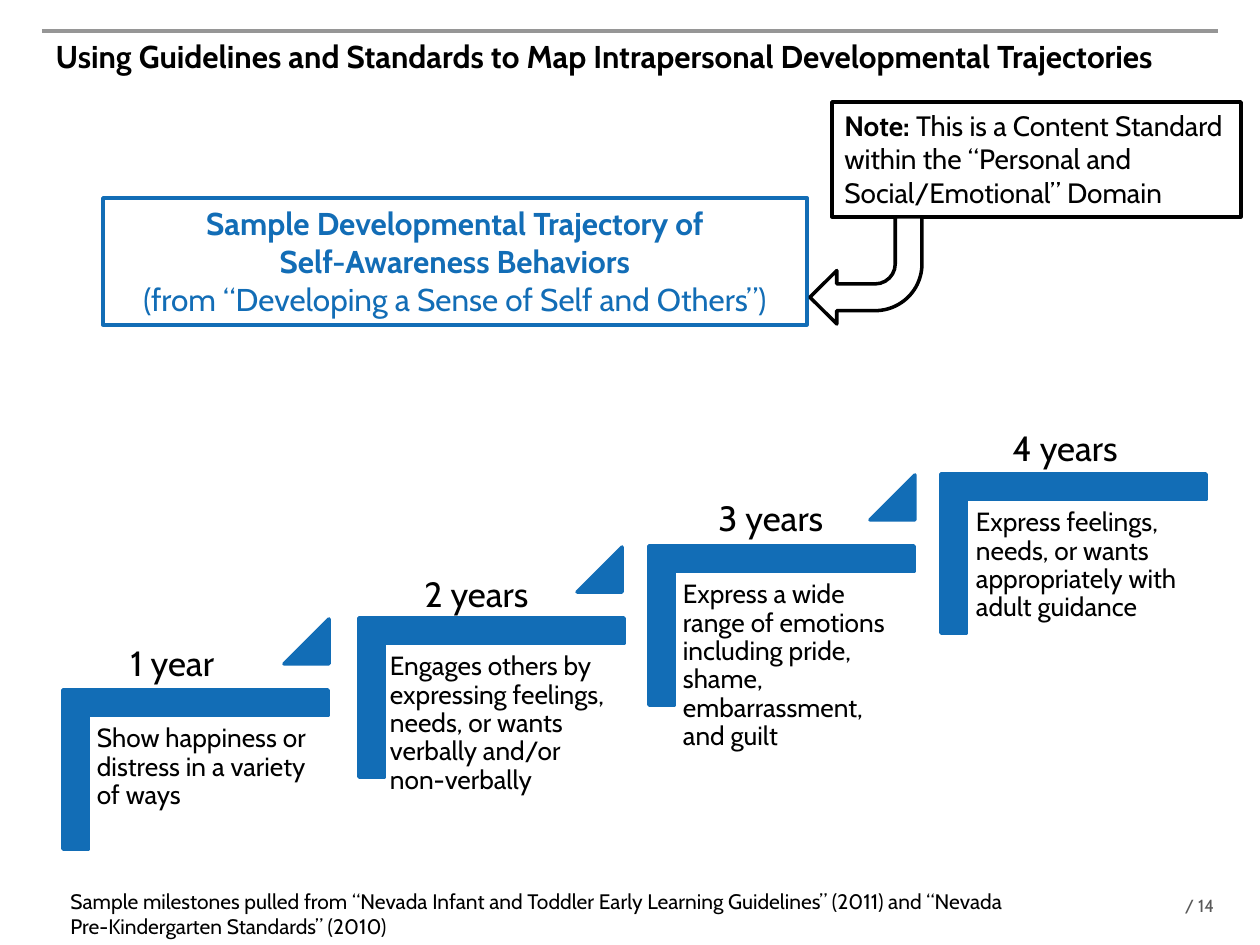
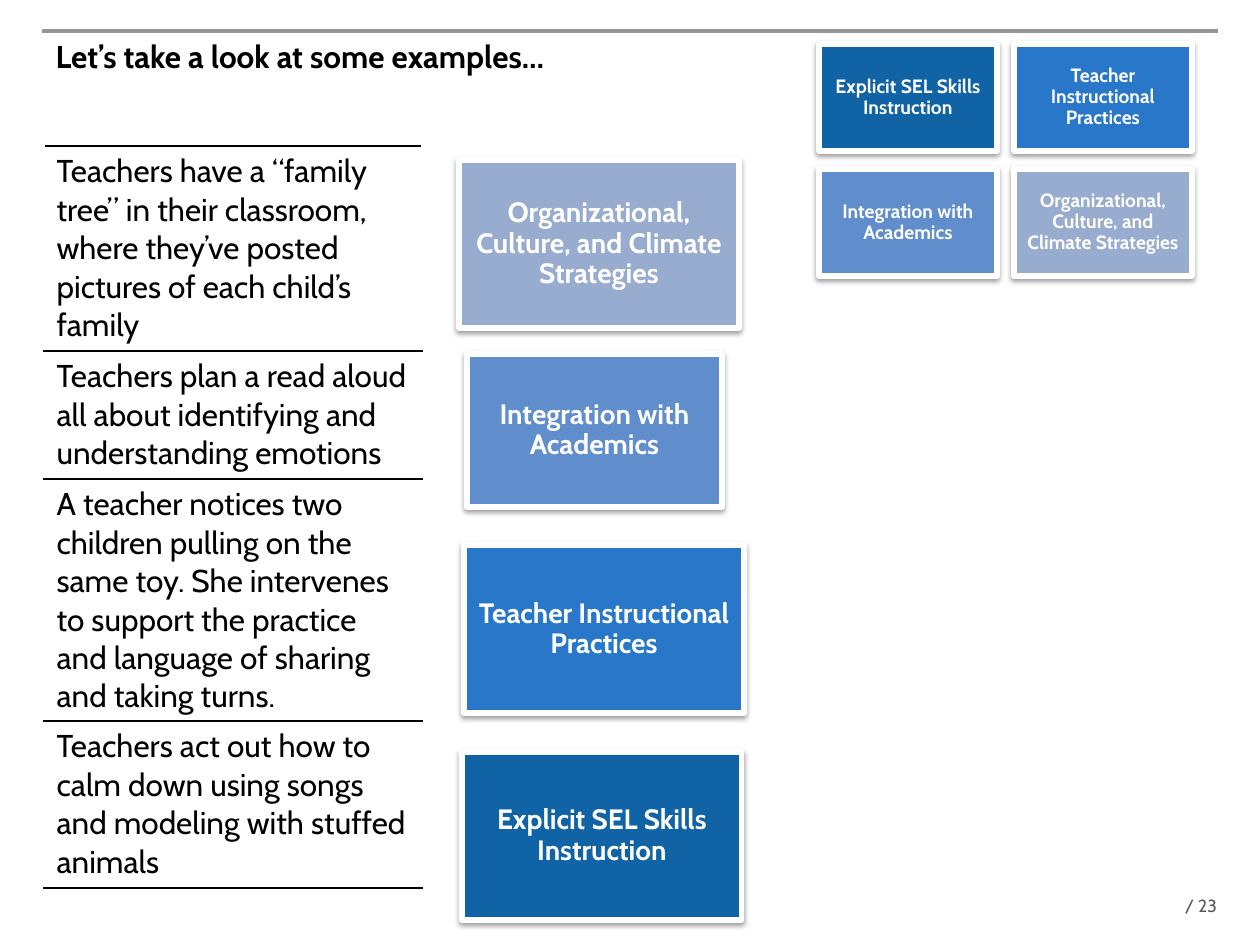
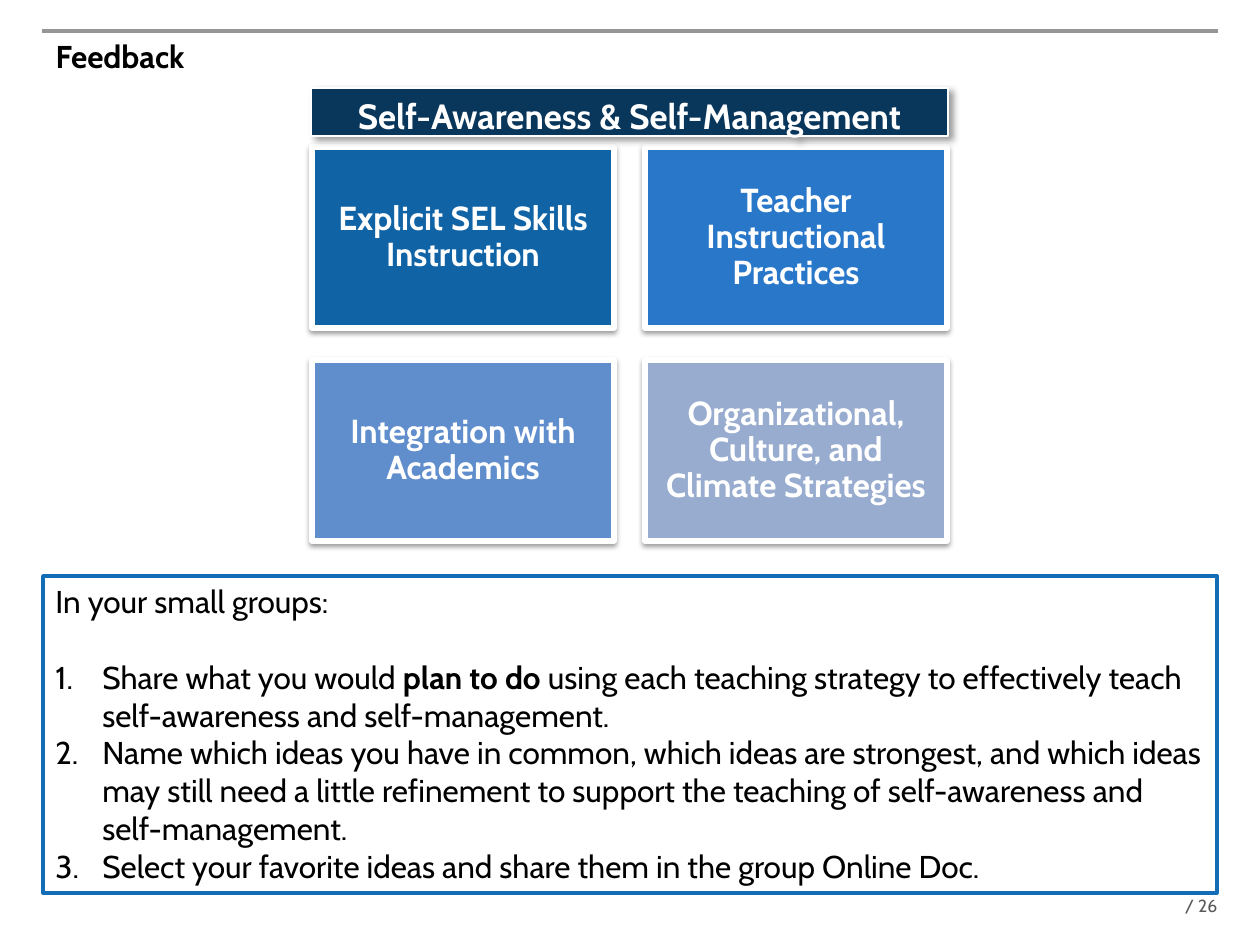
"""Build three slides on teaching self-awareness and self-management."""
from lxml.etree import SubElement
from pptx import Presentation
from pptx.dml.color import RGBColor
from pptx.enum.shapes import MSO_CONNECTOR, MSO_SHAPE
from pptx.enum.text import MSO_ANCHOR, MSO_AUTO_SIZE, PP_ALIGN
from pptx.oxml.ns import qn
from pptx.util import Emu, Pt

FONT = "Cabin"
BLACK = RGBColor(0x00, 0x00, 0x00)
WHITE = RGBColor(0xFF, 0xFF, 0xFF)
RULE_GRAY = RGBColor(0x96, 0x96, 0x96)
NUMBER_GRAY = RGBColor(0x59, 0x59, 0x59)
BLUE = RGBColor(0x12, 0x6D, 0xB6)
NAVY = RGBColor(0x09, 0x36, 0x5B)

EXPLICIT = ("Explicit SEL Skills Instruction", RGBColor(0x10, 0x63, 0xA5))
TEACHER = ("Teacher Instructional Practices", RGBColor(0x28, 0x77, 0xC9))
INTEGRATION = ("Integration with Academics", RGBColor(0x60, 0x8E, 0xCC))
CLIMATE = ("Organizational, Culture, and Climate Strategies", RGBColor(0x98, 0xAC, 0xCF))
STRATEGIES = [EXPLICIT, TEACHER, INTEGRATION, CLIMATE]

TILE_SHADOW = (38, 3.1, 1.6, 90)
BANNER_SHADOW = (40, 4, 3, 45)

MAP_TITLE = "Using Guidelines and Standards to Map Intrapersonal Developmental Trajectories"
TRAJECTORY = [
    "**Sample Developmental Trajectory of**",
    "**Self-Awareness Behaviors**",
    "(from “Developing a Sense of Self and Others”)",
]
NOTE = "**Note: **This is a Content Standard within the “Personal and Social/Emotional” Domain"
SOURCE = (
    "Sample milestones pulled from “Nevada Infant and Toddler Early Learning "
    "Guidelines” (2011) and “Nevada Pre-Kindergarten Standards” (2010)"
)
MILESTONES = [
    ("1 year", 63, 635, "Show happiness or distress in a variety of ways"),
    ("2 years", 359, 566, "Engages others by expressing feelings, needs, or wants "
                          "verbally and/or non-verbally"),
    ("3 years", 649, 490, "Express a wide range of emotions including pride, shame, "
                          "embarrassment, and guilt"),
    ("4 years", 941, 420, "Express feelings, needs, or wants appropriately with adult guidance"),
]

EXAMPLES_TITLE = "Let’s take a look at some examples…"
EXAMPLES = [
    ("Teachers have a “family tree” in their classroom, where they’ve posted pictures "
     "of each child’s family", 205, CLIMATE, (459, 160, 280, 168)),
    ("Teachers plan a read aloud all about identifying and understanding emotions",
     128, INTEGRATION, (467, 354, 255, 153)),
    ("A teacher notices two children pulling on the same toy. She intervenes to support "
     "the practice and language of sharing and taking turns.",
     242, TEACHER, (464, 545, 280, 168)),
    ("Teachers act out how to calm down using songs and modeling with stuffed animals",
     167, EXPLICIT, (462, 752, 280, 168)),
]

FEEDBACK_TITLE = "Feedback"
BANNER = "**Self-Awareness & Self-Management**"
GROUP_INTRO = "In your small groups:"
GROUP_STEPS = [
    "Share what you would **plan to do **using each teaching strategy to effectively "
    "teach self-awareness and self-management.",
    "Name which ideas you have in common, which ideas are strongest, and which ideas may "
    "still need a little refinement to support the teaching of self-awareness and "
    "self-management.",
    "Select your favorite ideas and share them in the group Online Doc.",
]


def px(length):
    return Emu(round(length * 914400 / 126))


def place(area):
    return [px(length) for length in area]


def write(frame, lines, size, color=BLACK, align=PP_ALIGN.LEFT, spacing=None):
    """Fill a text frame; text between double asterisks is bold."""
    frame.word_wrap = True
    for index, line in enumerate(lines):
        para = frame.paragraphs[0] if index == 0 else frame.add_paragraph()
        para.alignment = align
        para.line_spacing = spacing
        for order, words in enumerate(line.split("**")):
            if words:
                span = para.add_run()
                span.text = words
                span.font.name = FONT
                span.font.size = Pt(size)
                span.font.bold = order % 2 == 1
                span.font.color.rgb = color


def set_insets(frame, inset):
    frame.margin_left = frame.margin_right = px(inset)
    frame.margin_top = frame.margin_bottom = px(inset)


def add_text(page, area, words, size, color=BLACK, inset=None, spacing=None):
    frame = page.shapes.add_textbox(*place(area)).text_frame
    if inset is not None:
        set_insets(frame, inset)
    write(frame, [words], size, color, spacing=spacing)


def add_figure(page, kind, area, fill, line, width=2):
    figure = page.shapes.add_shape(kind, *place(area))
    figure.shadow.inherit = False
    figure.fill.solid()
    figure.fill.fore_color.rgb = fill
    figure.line.color.rgb = line
    figure.line.width = Pt(width)
    figure.text_frame.vertical_anchor = MSO_ANCHOR.TOP
    return figure


def add_shadow(figure, opacity, blur, distance, angle):
    effects = figure.element.spPr.find(qn("a:effectLst"))
    shadow = SubElement(effects, qn("a:outerShdw"), blurRad=str(Pt(blur)), dist=str(Pt(distance)),
                        dir=str(angle * 60000), rotWithShape="0")
    color = SubElement(shadow, qn("a:srgbClr"), val=str(BLACK))
    SubElement(color, qn("a:alpha"), val=str(opacity * 1000))


def add_tile(page, area, strategy, size, inset=6):
    name, fill = strategy
    tile = add_figure(page, MSO_SHAPE.RECTANGLE, area, fill, WHITE, 3)
    add_shadow(tile, *TILE_SHADOW)
    tile.text_frame.vertical_anchor = MSO_ANCHOR.MIDDLE
    set_insets(tile.text_frame, inset)
    write(tile.text_frame, [f"**{name}**"], size, WHITE, PP_ALIGN.CENTER, 0.9)


def add_strategy_grid(page, left, top, width, height, across, down, size, inset):
    for index, strategy in enumerate(STRATEGIES):
        row, column = divmod(index, 2)
        area = (left + column * across, top + row * down, width, height)
        add_tile(page, area, strategy, size, inset)


def add_page(deck, title, number):
    page = deck.slides.add_slide(deck.slide_layouts[5])
    rule = page.shapes.add_connector(MSO_CONNECTOR.STRAIGHT, *place((42, 31, 1218, 31)))
    rule.line.color.rgb = RULE_GRAY
    rule.line.width = Pt(2)
    SubElement(rule.element.spPr, qn("a:effectLst"))
    add_text(page, (1185, 895, 79, 21), f"/ {number}", 10, NUMBER_GRAY, inset=0)
    heading = page.shapes.title
    heading.left, heading.top, heading.width, heading.height = place((43, 31, 1174, 84))
    heading.text_frame.auto_size = MSO_AUTO_SIZE.NONE
    heading.text_frame.vertical_anchor = MSO_ANCHOR.TOP
    write(heading.text_frame, [f"**{title}**"], 18)
    return page


def build_map(deck):
    page = add_page(deck, MAP_TITLE, 14)
    long_side, short_side, across, rise = 265, 159, 293, 72
    turn = (long_side - short_side) / 2
    for index, (age, left, label_top, milestone) in enumerate(MILESTONES):
        top = 690 - rise * index
        corner = add_figure(page, MSO_SHAPE.CORNER,
                            (left + turn, top - turn, short_side, long_side), BLUE, BLUE)
        corner.rotation = 90
        corner.adjustments[0] = corner.adjustments[1] = 0.16
        add_text(page, (89 + across * index, top + 27, 239, 209), milestone, 15,
                 inset=8, spacing=0.9)
        add_text(page, (118 + 294 * index, label_top, 165, 55), age, 20)
        if index < len(MILESTONES) - 1:
            wedge = add_figure(page, MSO_SHAPE.ISOSCELES_TRIANGLE,
                               (284 + across * index, top - 71, 45, 45), BLUE, BLUE)
            wedge.adjustments[0] = 1
    heading = add_figure(page, MSO_SHAPE.RECTANGLE, (103, 198, 704, 127), WHITE, BLUE)
    write(heading.text_frame, TRAJECTORY, 18, BLUE, PP_ALIGN.CENTER)
    add_text(page, (58, 882, 987, 63), SOURCE, 12)
    note = add_figure(page, MSO_SHAPE.RECTANGLE, (832, 102, 409, 115), WHITE, BLACK)
    write(note.text_frame, [NOTE], 16)
    arrow = add_figure(page, MSO_SHAPE.BENT_ARROW, (810, 217, 112, 107), WHITE, BLACK)
    arrow.rotation = 180


def add_borders(cell):
    properties = cell._tc.get_or_add_tcPr()
    for index, side in enumerate(("a:lnT", "a:lnB")):
        border = SubElement(properties, qn(side), w=str(Pt(1)))
        fill = SubElement(border, qn("a:solidFill"))
        SubElement(fill, qn("a:srgbClr"), val=str(BLACK))
        properties.insert(index, border)


def build_examples(deck):
    page = add_page(deck, EXAMPLES_TITLE, 23)
    add_strategy_grid(page, 819, 44, 178, 107, 195, 125, 11, 6)
    height = sum(example[1] for example in EXAMPLES)
    table = page.shapes.add_table(len(EXAMPLES), 1, *place((44, 146, 378, height))).table
    table.first_row = table.horz_banding = False
    for row, (example, row_height, strategy, area) in zip(table.rows, EXAMPLES):
        row.height = px(row_height)
        cell = row.cells[0]
        cell.fill.background()
        add_borders(cell)
        write(cell.text_frame, [example], 18)
        add_tile(page, area, strategy, 16)


def build_feedback(deck):
    page = add_page(deck, FEEDBACK_TITLE, 26)
    add_strategy_grid(page, 312, 147, 302, 181, 333, 213, 19, 10)
    banner = add_figure(page, MSO_SHAPE.RECTANGLE, (311, 88, 637, 48), NAVY, WHITE, 0.75)
    add_shadow(banner, *BANNER_SHADOW)
    write(banner.text_frame, [BANNER], 20, WHITE, PP_ALIGN.CENTER)
    task = add_figure(page, MSO_SHAPE.RECTANGLE, (43, 576, 1174, 317), WHITE, BLUE)
    write(task.text_frame, [GROUP_INTRO, *GROUP_STEPS], 18)
    steps = task.text_frame.paragraphs[1:]
    steps[0].space_before = Pt(21.6)
    for para in steps:
        properties = para._p.get_or_add_pPr()
        properties.set("marL", str(px(47)))
        properties.set("indent", str(-px(47)))
        SubElement(properties, qn("a:buAutoNum"), type="arabicPeriod")


def main():
    deck = Presentation()
    deck.slide_width, deck.slide_height = px(1260), px(945)
    build_map(deck)
    build_examples(deck)
    build_feedback(deck)
    deck.save("out.pptx")


if __name__ == "__main__":
    main()
